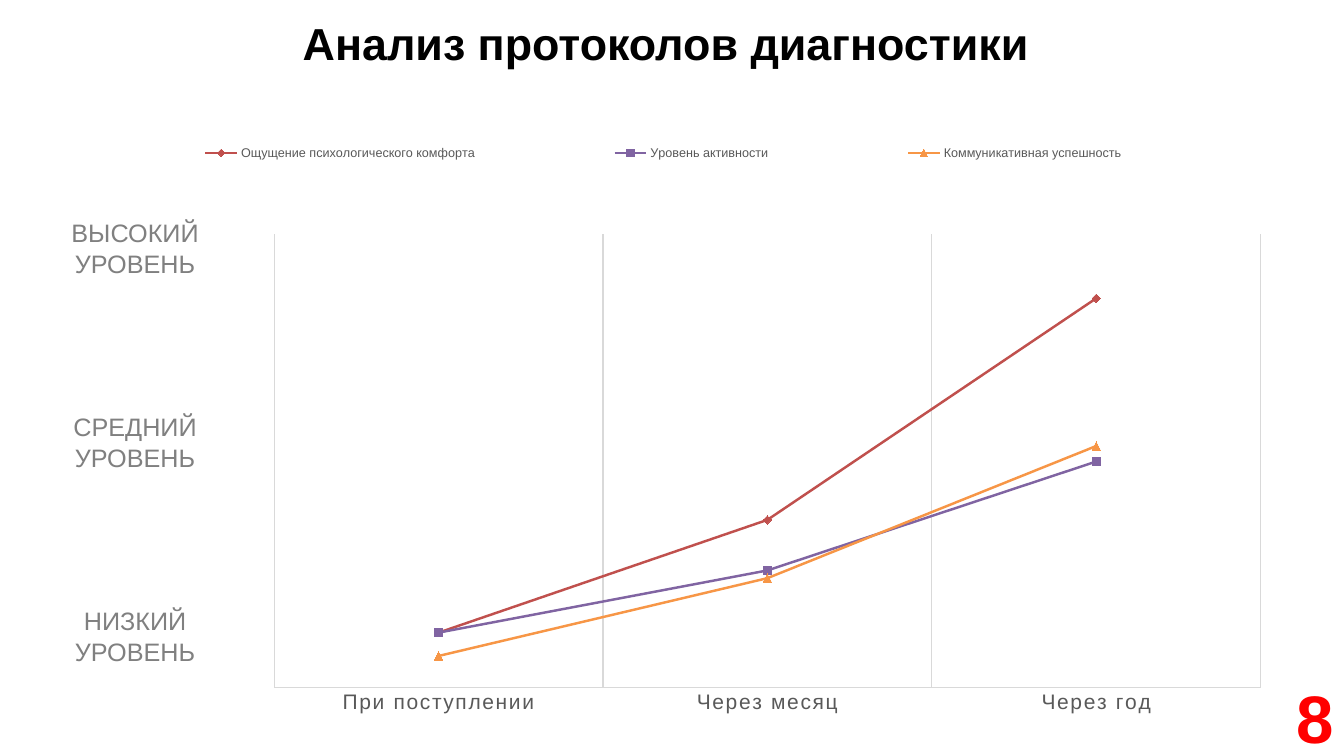
"""Build the slide with a line chart of diagnostic results over time."""
from dataclasses import dataclass

from lxml import etree
from pptx import Presentation
from pptx import util as u
from pptx.chart import data as chart_data
from pptx.dml import color
from pptx.enum import chart as ch
from pptx.enum import text
from pptx.oxml import ns

FONT = "Arial"
COLORS = {
    "title": "000000",
    "number": "FF0000",
    "level": "808080",
    "label": "595959",
    "grid": "D9D9D9",
    "comfort": "C0504D",
    "activity": "8064A2",
    "communication": "F79646",
}


@dataclass
class Caption:
    wording: str
    left: float
    top: float
    width: float
    height: float
    size: int
    color: str
    bold: bool = False


@dataclass
class Indicator:
    name: str
    values: tuple[int, ...]
    color: str
    marker: ch.XL_MARKER_STYLE


PERIODS = ("При поступлении", "Через месяц", "Через год")
INDICATORS = (
    Indicator("Ощущение психологического комфорта", (14, 43, 100), "comfort",
              ch.XL_MARKER_STYLE.DIAMOND),
    Indicator("Уровень активности", (14, 30, 58), "activity",
              ch.XL_MARKER_STYLE.SQUARE),
    Indicator("Коммуникативная успешность", (8, 28, 62), "communication",
              ch.XL_MARKER_STYLE.TRIANGLE),
)
LEVELS = ("ВЫСОКИЙ УРОВЕНЬ", "СРЕДНИЙ УРОВЕНЬ", "НИЗКИЙ УРОВЕНЬ")
LEVEL_TOP, LEVEL_STEP = 2.11, 1.925
HEADINGS = (
    Caption("Анализ протоколов диагностики", 1.86, 0.11, 9.49, 0.64, 32, "title", True),
    Caption("8", 12.65, 6.66, 0.78, 0.91, 48, "number", True),
)


def rgb(name: str) -> color.RGBColor:
    return color.RGBColor.from_string(COLORS[name])


def style_font(font, size: float, color_name: str, bold: bool = False) -> None:
    font.name = FONT
    font.size = u.Pt(size)
    font.bold = bold
    font.color.rgb = rgb(color_name)


def style_line(line, color_name: str, width: float) -> None:
    line.color.rgb = rgb(color_name)
    line.width = u.Pt(width)


def add_caption(slide, caption: Caption) -> None:
    box = slide.shapes.add_textbox(u.Inches(caption.left), u.Inches(caption.top),
                                   u.Inches(caption.width), u.Inches(caption.height))
    frame = box.text_frame
    frame.word_wrap = True
    frame.auto_size = text.MSO_AUTO_SIZE.SHAPE_TO_FIT_TEXT
    frame.text = caption.wording
    paragraph = frame.paragraphs[0]
    paragraph.alignment = text.PP_ALIGN.CENTER
    style_font(paragraph.runs[0].font, caption.size, caption.color, caption.bold)


def make_layout(x: float, y: float, w: float, h: float, inner: bool = False):
    layout = etree.Element(ns.qn("c:layout"))
    manual = etree.SubElement(layout, ns.qn("c:manualLayout"))
    settings = [("layoutTarget", "inner")] if inner else []
    settings += [("xMode", "edge"), ("yMode", "edge"),
                 ("x", x), ("y", y), ("w", w), ("h", h)]
    for tag, value in settings:
        etree.SubElement(manual, ns.qn(f"c:{tag}")).set("val", str(value))
    return layout


def place(element, layout, position: int) -> None:
    for old in element.findall(ns.qn("c:layout")):
        element.remove(old)
    element.insert(position, layout)


def add_diagnostics_chart(slide) -> None:
    results = chart_data.CategoryChartData()
    results.categories = PERIODS
    for indicator in INDICATORS:
        results.add_series(indicator.name, indicator.values)
    chart = slide.shapes.add_chart(
        ch.XL_CHART_TYPE.LINE_MARKERS, u.Inches(0.51), u.Inches(1.03),
        u.Inches(12.14), u.Inches(6.25), results).chart
    style_font(chart.font, 10, "title")
    chart.has_title = False

    chart.has_legend = True
    legend = chart.legend
    legend.position = ch.XL_LEGEND_POSITION.TOP
    legend.include_in_layout = False
    style_font(legend.font, 9, "label")
    place(legend._element, make_layout(0.015, 0.04, 0.97, 0.076), 1)

    plot = chart.plots[0]
    plot.vary_by_categories = False
    for indicator, series in zip(INDICATORS, plot.series):
        series.smooth = False
        style_line(series.format.line, indicator.color, 1.75)
        series.marker.style = indicator.marker
        series.marker.size = 6
        series.marker.format.fill.solid()
        series.marker.format.fill.fore_color.rgb = rgb(indicator.color)
        style_line(series.marker.format.line, indicator.color, 0.75)

    periods = chart.category_axis
    periods.major_tick_mark = ch.XL_TICK_MARK.NONE
    periods.has_major_gridlines = True
    style_line(periods.major_gridlines.format.line, "grid", 0.75)
    style_line(periods.format.line, "grid", 0.75)
    style_font(periods.tick_labels.font, 15, "label")
    for properties in periods._element.iter(ns.qn("a:defRPr")):
        properties.set("spc", "120")

    scores = chart.value_axis
    scores.minimum_scale = 0
    scores.maximum_scale = 116.5
    scores.has_major_gridlines = False
    scores.visible = False
    plot_area = chart._chartSpace.find(".//" + ns.qn("c:plotArea"))
    place(plot_area, make_layout(0.182, 0.207, 0.806, 0.719, inner=True), 0)


def main() -> None:
    deck = Presentation()
    deck.slide_width, deck.slide_height = u.Inches(13.33), u.Inches(7.5)
    slide = deck.slides.add_slide(deck.slide_layouts[6])
    for heading in HEADINGS:
        add_caption(slide, heading)
    add_diagnostics_chart(slide)
    for row, level in enumerate(LEVELS):
        top = LEVEL_TOP + row * LEVEL_STEP
        add_caption(slide, Caption(level, 0.42, top, 1.84, 0.71, 18, "level"))
    deck.save("out.pptx")


if __name__ == "__main__":
    main()
